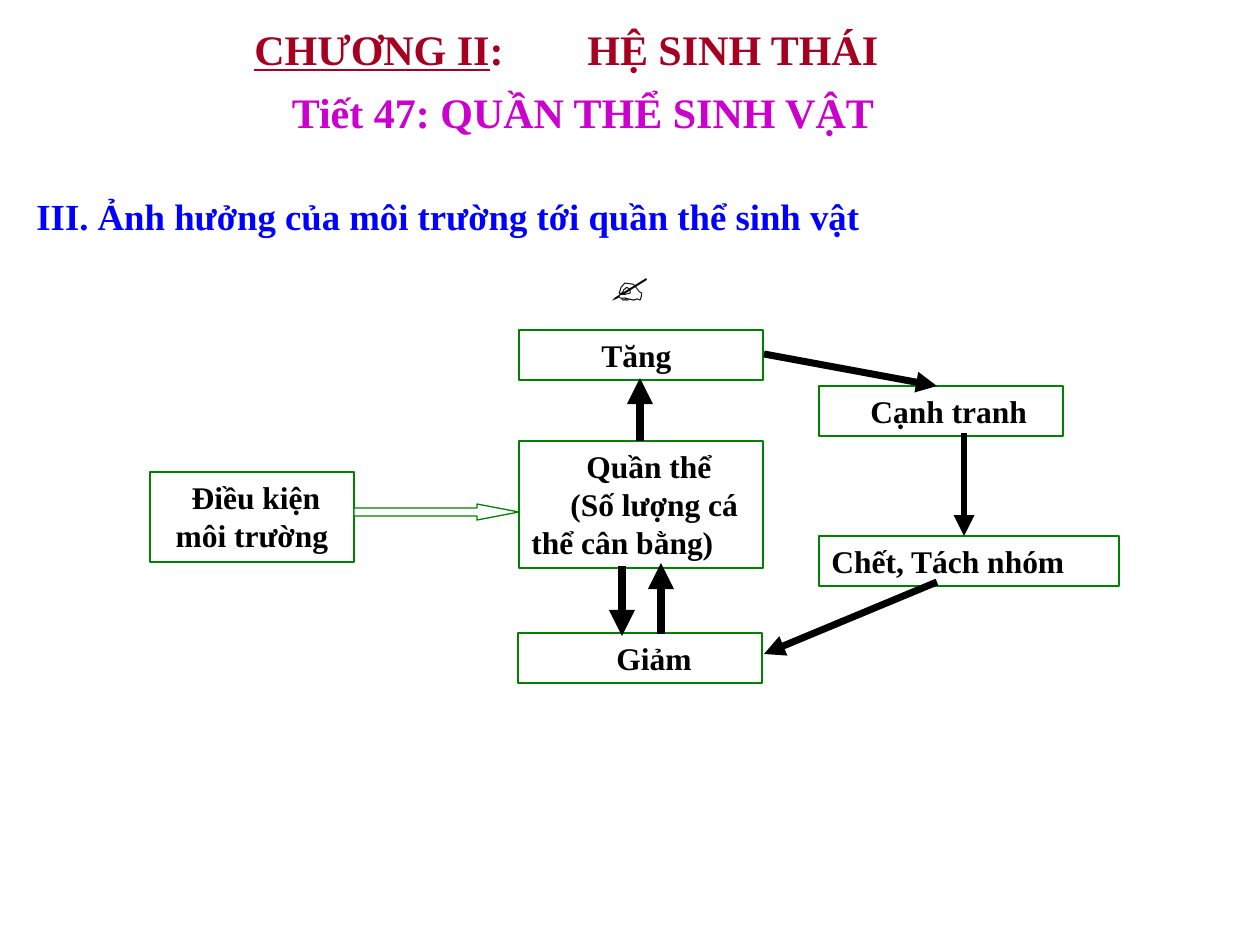
from lxml.etree import SubElement
from pptx import Presentation
from pptx.dml.color import RGBColor
from pptx.enum.shapes import MSO_CONNECTOR as Connector, MSO_SHAPE as Shape
from pptx.enum.text import MSO_ANCHOR as Anchor, PP_ALIGN as Align
from pptx.oxml.ns import qn
from pptx.util import Pt

PX = 914400 / 126
FONT = "Times New Roman"
BLACK, GREEN, WHITE = "000000", "008000", "FFFFFF"


def px(*lengths):
    """Turn px lengths into EMU."""
    return [round(length * PX) for length in lengths]


def colour(hex_text):
    return RGBColor.from_string(hex_text)


def add_span(para, text, size, hex_text=BLACK, underline=False):
    span = para.add_run()
    span.text = text
    span.font.name = FONT
    span.font.size = Pt(size)
    span.font.bold = True
    span.font.underline = underline
    span.font.color.rgb = colour(hex_text)


def set_indent(para, first_line):
    para._p.get_or_add_pPr().set("indent", str(px(first_line)[0]))


def add_label(page, box, wrap=True):
    """Add an empty text box and return its first paragraph."""
    frame = page.shapes.add_textbox(*px(*box)).text_frame
    frame.word_wrap = wrap
    return frame.paragraphs[0]


def add_titles(page, left, top):
    chapter = add_label(page, (left + 242, top, 660, 60))
    chapter.line_spacing = 0.95
    tabs = SubElement(chapter._p.get_or_add_pPr(), qn("a:tabLst"))
    SubElement(tabs, qn("a:tab"), pos=str(px(333)[0]), algn="l")
    add_span(chapter, "CHƯƠNG II", 24, "A50021", underline=True)
    add_span(chapter, ":\tHỆ SINH THÁI", 24, "A50021")

    lesson = add_label(page, (left, top + 63, 1166, 60))
    lesson.alignment = Align.CENTER
    lesson.line_spacing = 0.95
    add_span(lesson, "Tiết 47: QUẦN THỂ SINH VẬT", 24, "CC00CC")


def add_section_heading(page, left, top):
    para = add_label(page, (left, top, 848, 57), wrap=False)
    add_span(para, "III. Ảnh hưởng của môi trường tới quần thể sinh vật",
             21, "0000FF")


def add_outlined(page, kind, box):
    shape = page.shapes.add_shape(kind, *px(*box))
    shape.shadow.inherit = False
    shape.fill.background()
    shape.line.color.rgb = colour(GREEN)
    shape.line.width = Pt(0.75)
    return shape


def add_node(page, box, lines, align=Align.LEFT):
    """Add a green frame; lines holds (first-line indent, text) pairs."""
    frame = add_outlined(page, Shape.RECTANGLE, box).text_frame
    frame.word_wrap = True
    frame.vertical_anchor = Anchor.TOP
    for index, (indent, text) in enumerate(lines):
        para = frame.add_paragraph() if index else frame.paragraphs[0]
        para.alignment = align
        set_indent(para, indent)
        add_span(para, text, 18)


def add_arrow(page, start, end, weight):
    arrow = page.shapes.add_connector(Connector.STRAIGHT, *px(*start, *end))
    arrow.line.color.rgb = colour(BLACK)
    arrow.line.width = Pt(weight)
    SubElement(arrow.line._get_or_add_ln(), qn("a:tailEnd"), type="triangle")
    SubElement(arrow._element.spPr, qn("a:effectLst"))


def add_flow(page, left, top):
    """Draw how the environment moves the population up and down."""
    def at(x, y, *size):
        return (left + x, top + y, *size)

    add_node(page, at(0, 220, 204, 90), [(8, "Điều kiện môi trường")],
             Align.CENTER)

    influence = add_outlined(page, Shape.RIGHT_ARROW, at(204, 252, 165, 16))
    influence.adjustments[0] = 0.5
    influence.adjustments[1] = 2.62
    influence.fill.solid()
    influence.fill.fore_color.rgb = colour(WHITE)

    nodes = [
        ((369, 189, 244, 127),
         [(55, "Quần thể"), (39, "(Số lượng cá thể cân bằng)")]),
        ((369, 78, 244, 50), [(70, "Tăng")]),
        ((669, 134, 244, 50), [(39, "Cạnh tranh")]),
        ((669, 284, 300, 50), [(0, "Chết, Tách nhóm")]),
        ((368, 381, 244, 50), [(86, "Giảm")]),
    ]
    for box, lines in nodes:
        add_node(page, at(*box), lines)

    arrows = [
        ((490, 189), (490, 126), 5),
        ((614, 102), (787, 134), 4),
        ((814, 181), (814, 284), 4),
        ((787, 330), (614, 402), 4),
        ((472, 314), (472, 384), 5),
        ((511, 382), (511, 311), 5),
    ]
    for start, end, weight in arrows:
        add_arrow(page, at(*start), at(*end), weight)

    writing_hand = add_label(page, at(440, 0, 72, 63), wrap=False)
    set_indent(writing_hand, 8)
    add_span(writing_hand, "✍", 24)


def main():
    deck = Presentation()
    deck.slide_width, deck.slide_height = px(1260, 945)
    page = deck.slides.add_slide(deck.slide_layouts[6])
    add_section_heading(page, 24, 188)
    add_flow(page, 150, 252)
    add_titles(page, 0, 21)
    deck.save("out.pptx")


if __name__ == "__main__":
    main()
